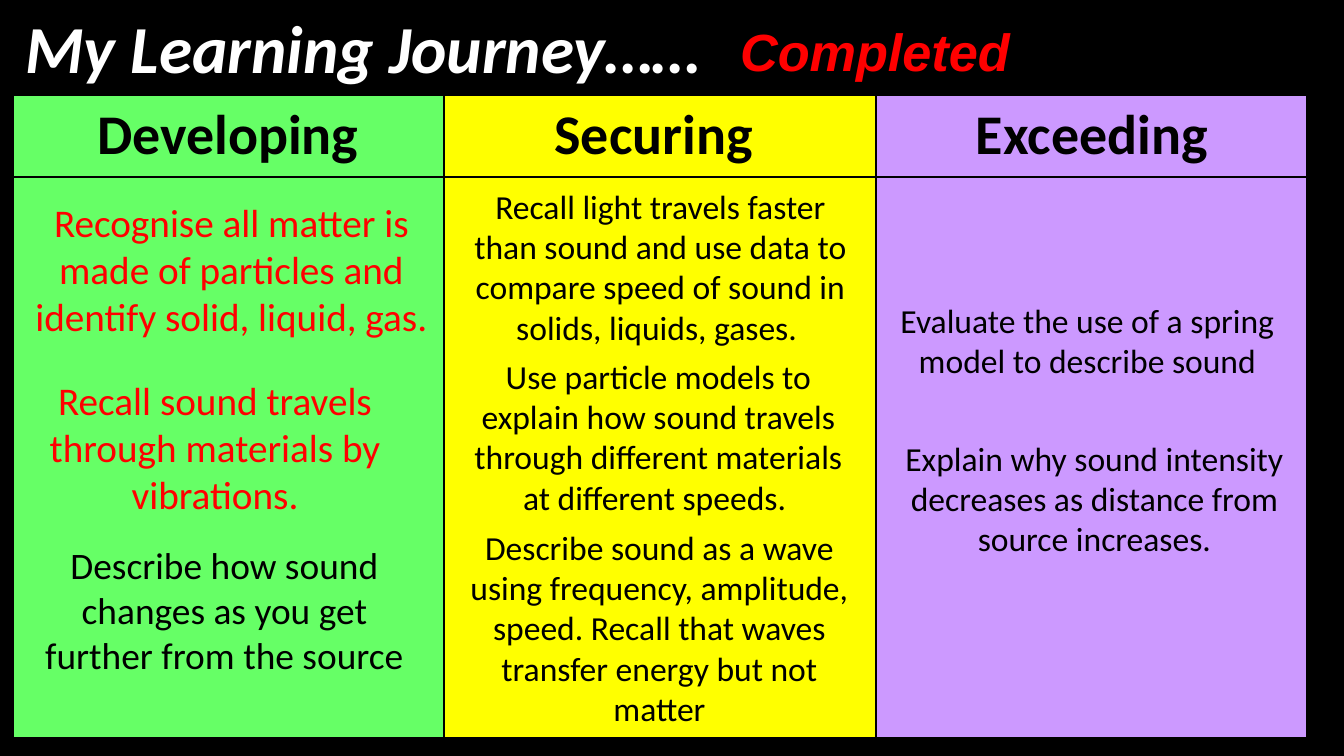
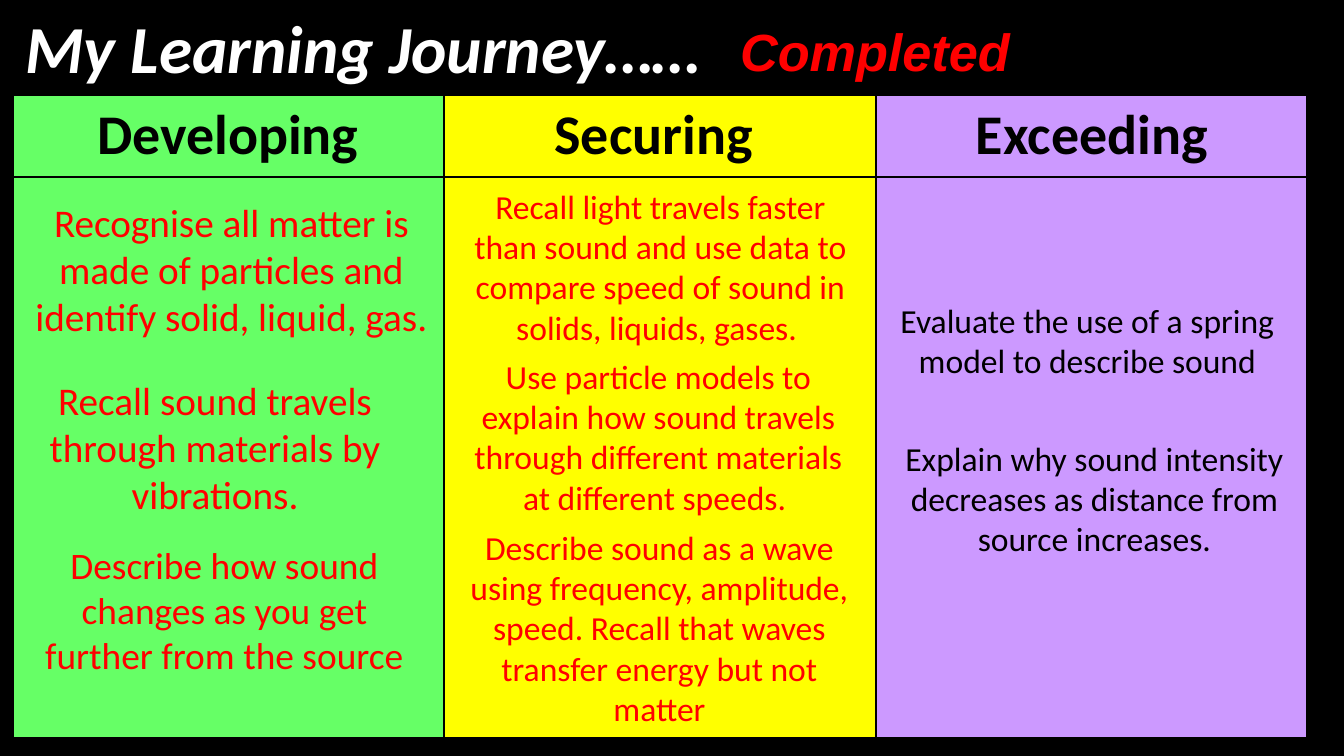
from lxml import etree
from pptx import Presentation
from pptx.dml.color import RGBColor
from pptx.enum.text import MSO_ANCHOR, MSO_AUTO_SIZE, PP_ALIGN
from pptx.oxml.ns import qn
from pptx.util import Emu, Pt

PX_PER_INCH = 134.4
EMU_PER_INCH = 914400

BLACK = RGBColor(0x00, 0x00, 0x00)
WHITE = RGBColor(0xFF, 0xFF, 0xFF)
RED = RGBColor(0xFF, 0x00, 0x00)
GREEN = RGBColor(0x66, 0xFF, 0x66)
YELLOW = RGBColor(0xFF, 0xFF, 0x00)
PURPLE = RGBColor(0xCC, 0x99, 0xFF)

LEFT, CENTER = PP_ALIGN.LEFT, PP_ALIGN.CENTER
MIDDLE = MSO_ANCHOR.MIDDLE
GROW = MSO_AUTO_SIZE.SHAPE_TO_FIT_TEXT

STAGES = [("Developing", GREEN), ("Securing ", YELLOW), ("Exceeding", PURPLE)]
TABLE_LEFT, TABLE_TOP = 12, 94
STAGE_WIDTH = 432
ROW_HEIGHTS = [83, 562]
OUTER_LINE, INNER_LINE = 2.25, 1

# Goals in the order they are completed: (left, top, width, height), size, text
GOALS = [
    ((19, 192, 425, 187), 21,
     "Recognise all matter is made of particles and identify solid, liquid, gas."),
    ((23, 370, 384, 156), 21,
     "Recall sound travels through materials by vibrations."),
    ((23, 536, 403, 180), 20,
     "Describe how sound changes as you get further from the source"),
    ((448, 179, 425, 207), 18,
     "Recall light travels faster than sound and use data to compare speed "
     "of sound in solids, liquids, gases. "),
    ((446, 349, 425, 207), 18,
     "Use particle models to explain how sound travels through different "
     "materials at different speeds. "),
    ((446, 520, 427, 247), 18,
     "Describe sound as a wave using frequency, amplitude, speed. "
     "Recall that waves transfer energy but not matter"),
    ((875, 293, 425, 125), 18,
     "Evaluate the use of a spring model to describe sound"),
    ((882, 431, 425, 167), 18,
     "Explain why sound intensity decreases as distance from source increases."),
]
COMPLETED_COUNTS = [2, 6]


def px(length):
    return Emu(round(length * EMU_PER_INCH / PX_PER_INCH))


def add_span(para, text, size, color, font="Calibri", bold=False, italic=False):
    span = para.add_run()
    span.text = text
    span.font.name = font
    span.font.size = Pt(size)
    span.font.bold = bold
    span.font.italic = italic
    span.font.color.rgb = color


def add_text(slide, place, text, size, color, align=LEFT, **style):
    box = slide.shapes.add_textbox(*map(px, place))
    frame = box.text_frame
    frame.word_wrap = True
    frame.auto_size = GROW
    para = frame.paragraphs[0]
    para.alignment = align
    add_span(para, text, size, color, **style)


def set_borders(cell, widths):
    """Draw black cell borders; widths maps a side (L, R, T, B) to points."""
    properties = cell._tc.get_or_add_tcPr()
    for side, width in widths.items():
        line = etree.SubElement(properties, qn(f"a:ln{side}"), w=str(Pt(width)))
        fill = etree.SubElement(line, qn("a:solidFill"))
        etree.SubElement(fill, qn("a:srgbClr"), val=str(BLACK))


def add_stage_table(slide):
    rows, columns = len(ROW_HEIGHTS), len(STAGES)
    frame = slide.shapes.add_table(
        rows, columns, px(TABLE_LEFT), px(TABLE_TOP),
        px(STAGE_WIDTH * columns), px(sum(ROW_HEIGHTS)))
    table = frame.table
    table.first_row = False
    table.horz_banding = False
    for row, height in enumerate(ROW_HEIGHTS):
        table.rows[row].height = px(height)
    for column, (stage, color) in enumerate(STAGES):
        table.columns[column].width = px(STAGE_WIDTH)
        for row in range(rows):
            cell = table.cell(row, column)
            on_edge = {"L": column == 0, "R": column == columns - 1,
                       "T": row == 0, "B": row == rows - 1}
            set_borders(cell, {side: OUTER_LINE if outer else INNER_LINE
                               for side, outer in on_edge.items()})
            cell.fill.solid()
            cell.fill.fore_color.rgb = color
        heading = table.cell(0, column)
        heading.vertical_anchor = MIDDLE
        heading.margin_left = heading.margin_right = px(10)
        heading.margin_top = heading.margin_bottom = px(5)
        para = heading.text_frame.paragraphs[0]
        para.alignment = CENTER
        add_span(para, stage, 30, BLACK, bold=True)


def add_journey_slide(deck, completed_count):
    slide = deck.slides.add_slide(deck.slide_layouts[6])
    slide.background.fill.solid()
    slide.background.fill.fore_color.rgb = BLACK
    add_text(slide, (12, 0, 965, 190), "My Learning Journey……", 36, WHITE,
             bold=True, italic=True)
    add_stage_table(slide)
    add_text(slide, (727, 13, 367, 77), "Completed", 28, RED,
             font="Arial", bold=True, italic=True)
    for index, (place, size, goal) in enumerate(GOALS):
        color = RED if index < completed_count else BLACK
        add_text(slide, place, goal, size, color, CENTER)


def main():
    deck = Presentation()
    deck.slide_width, deck.slide_height = px(1344), px(756)
    for completed_count in COMPLETED_COUNTS:
        add_journey_slide(deck, completed_count)
    deck.save("out.pptx")


if __name__ == "__main__":
    main()
